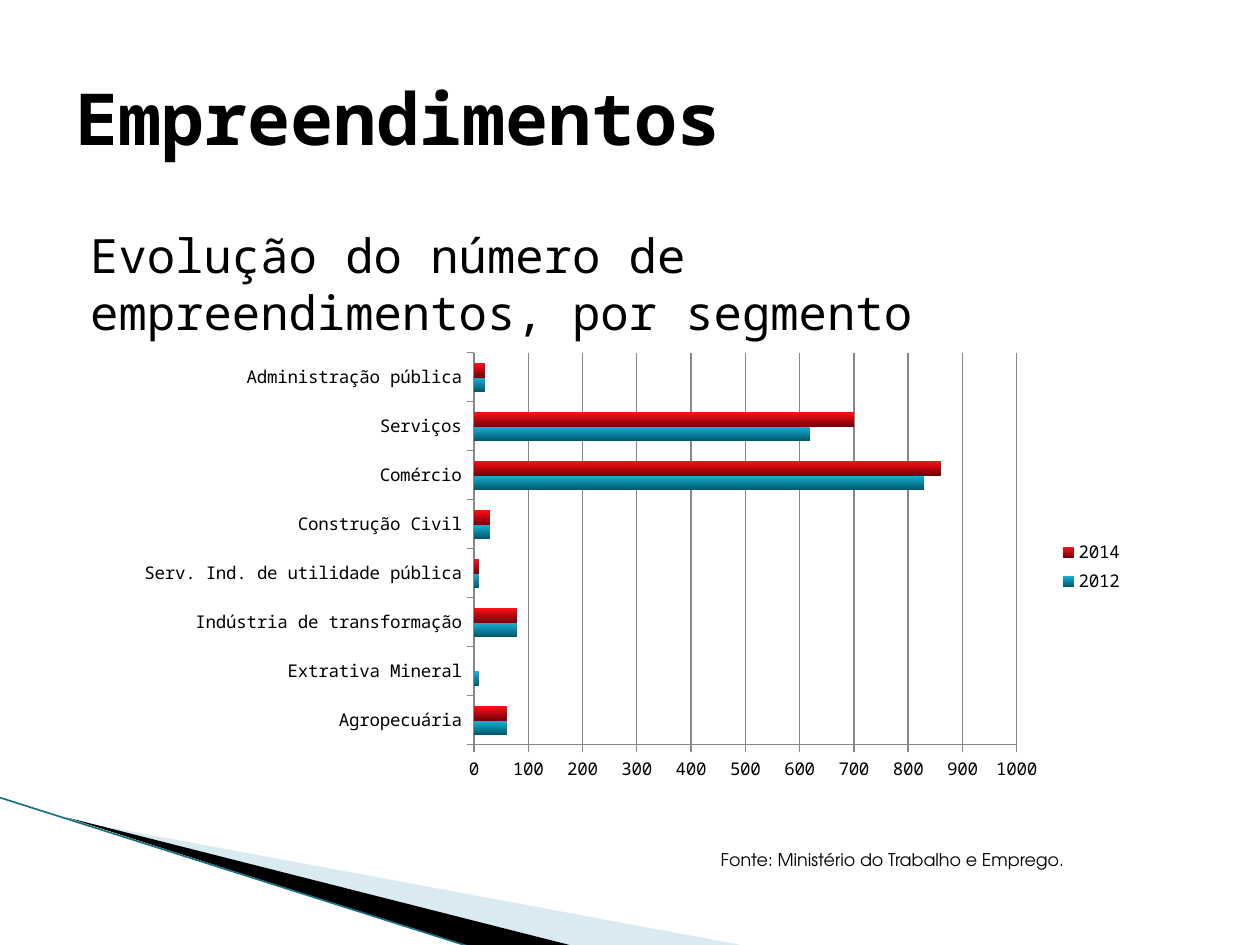
from lxml import etree
from pptx import Presentation
from pptx.chart.data import CategoryChartData
from pptx.dml.color import RGBColor
from pptx.enum.chart import XL_CHART_TYPE, XL_LEGEND_POSITION, XL_TICK_MARK
from pptx.enum.shapes import MSO_CONNECTOR
from pptx.enum.text import MSO_ANCHOR
from pptx.oxml.ns import qn
from pptx.util import Cm, Pt

BLACK = RGBColor(0, 0, 0)
PALE = RGBColor(0xA0, 0xCB, 0xDC)
EDGE = RGBColor(0x1A, 0x71, 0x86)
GRAY = RGBColor(0x87, 0x87, 0x87)
BLUES = RGBColor(0x1C, 0xB4, 0xDC), RGBColor(0x00, 0x5C, 0x70)
REDS = RGBColor(0xFF, 0x10, 0x18), RGBColor(0x78, 0x00, 0x06)
BAR = XL_CHART_TYPE.BAR_CLUSTERED
RIGHT = XL_LEGEND_POSITION.RIGHT
OUT = XL_TICK_MARK.OUTSIDE
LINE = MSO_CONNECTOR.STRAIGHT
TOP, MIDDLE = MSO_ANCHOR.TOP, MSO_ANCHOR.MIDDLE
MONO = "Noto Sans Mono"
SANS = "TeX Gyre Adventor"

ROWS = [
    ("Agropecuária", 60, 60),
    ("Extrativa Mineral", 10, 0),
    ("Indústria de transformação", 80, 80),
    ("Serv. Ind. de utilidade pública", 10, 10),
    ("Construção Civil", 30, 30),
    ("Comércio", 830, 860),
    ("Serviços", 620, 700),
    ("Administração pública", 20, 20),
]


def apply(item, form):
    for key, value in form.items():
        setattr(item, key, value)


def add_text(slide, box, text, font, anchor=MIDDLE):
    frame = slide.shapes.add_textbox(*map(Cm, box)).text_frame
    apply(frame, {"word_wrap": True, "vertical_anchor": anchor})
    para = frame.paragraphs[0]
    para.text = text
    apply(para.font, font)
    para.font.color.rgb = BLACK


def add_wedge(slide, box, points, color, alpha=None):
    left, top = box[:2]
    spots = [(Cm(left + x), Cm(top + y)) for x, y in points]
    pen = slide.shapes.build_freeform(*spots[0])
    pen.add_line_segments(spots[1:], close=True)
    shape = pen.convert_to_shape()
    shape.shadow.inherit = False
    shape.fill.solid()
    shape.fill.fore_color.rgb = color
    shape.line.fill.background()
    if alpha:
        tint = shape.fill._xPr.find(".//" + qn("a:srgbClr"))
        etree.SubElement(tint, qn("a:alpha")).set("val", str(alpha * 1000))


def add_corner(slide, box):
    left, top, width, height = box
    add_wedge(slide, box, [(1.4, 0.45), (15.1, height), (11.6, height)], PALE, 40)
    add_wedge(slide, box, [(1.35, 0.4), (11.6, height), (width, height)], BLACK)
    ends = left, top, left + width, top + height
    edge = slide.shapes.add_connector(LINE, *map(Cm, ends))
    edge.line.color.rgb = EDGE
    edge.line.width = Pt(0.95)
    etree.SubElement(edge._element.spPr, qn("a:effectLst"))


def add_bars(slide, box):
    names, *values = zip(*ROWS)
    data = CategoryChartData()
    data.categories = names
    for year, nums in zip(("2012", "2014"), values):
        data.add_series(year, nums)
    chart = slide.shapes.add_chart(BAR, *map(Cm, box), data).chart
    apply(chart, {"has_title": False, "has_legend": True})
    apply(chart.font, {"name": MONO, "size": Pt(10)})
    chart.font.color.rgb = BLACK
    apply(chart.legend, {"position": RIGHT, "include_in_layout": False})
    plot = chart.plots[0]
    apply(plot, {"gap_width": 150, "overlap": 0, "vary_by_categories": False})
    for series, shades in zip(plot.series, (BLUES, REDS)):
        fill = series.format.fill
        fill.gradient()
        fill.gradient_angle = 270
        for stop, shade in zip(fill.gradient_stops, shades):
            stop.color.rgb = shade
    span = chart.value_axis
    apply(span, {"minimum_scale": 0, "maximum_scale": 1000, "major_unit": 100,
                 "has_major_gridlines": True})
    for axis in (chart.category_axis, span):
        axis.major_tick_mark = OUT
    for part in (chart.category_axis, span, span.major_gridlines):
        part.format.line.color.rgb = GRAY
        part.format.line.width = Pt(0.75)


def main():
    deck = Presentation()
    apply(deck, {"slide_width": Cm(25.4), "slide_height": Cm(19.05)})
    slide = deck.slides.add_slide(deck.slide_layouts[6])
    add_corner(slide, (0, 16.08, 9.45, 3))
    add_text(slide, (1.27, 0.76, 22.86, 3.18), "Empreendimentos",
             {"name": MONO, "size": Pt(41), "bold": True})
    add_text(slide, (1.57, 4.44, 20.4, 2.5),
             "Evolução do número de empreendimentos, por segmento",
             {"name": MONO, "size": Pt(27)}, TOP)
    add_bars(slide, (2.5, 6.93, 20.4, 8.99))
    add_text(slide, (14.28, 16.88, 8, 0.9),
             "Fonte: Ministério do Trabalho e Emprego.",
             {"name": SANS, "size": Pt(10)})
    deck.save("out.pptx")


if __name__ == "__main__":
    main()
